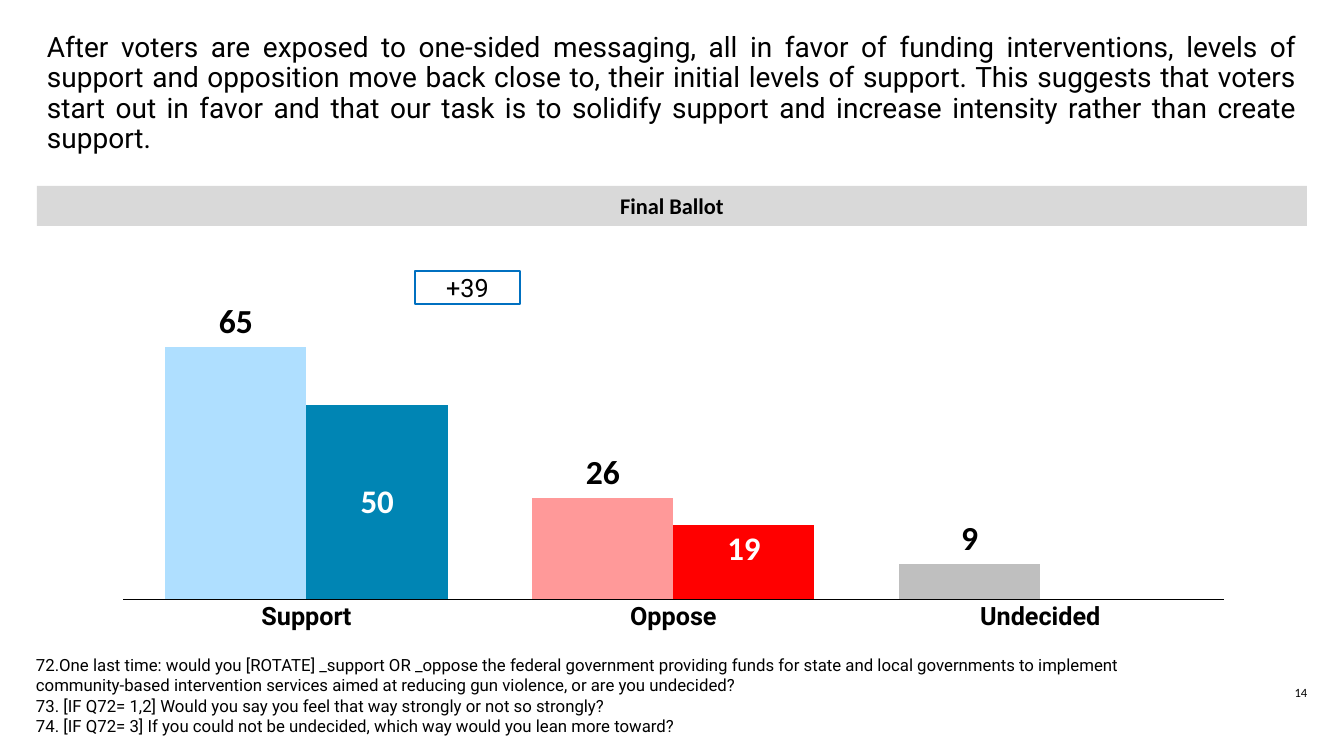
from copy import deepcopy
from lxml import etree
from pptx import Presentation
from pptx.chart.data import CategoryChartData
from pptx.dml.color import RGBColor
from pptx.enum.chart import XL_CHART_TYPE, XL_LABEL_POSITION, XL_TICK_MARK
from pptx.enum.shapes import MSO_SHAPE
from pptx.enum.text import MSO_ANCHOR, PP_ALIGN
from pptx.util import Pt

RECT = MSO_SHAPE.RECTANGLE
COLUMN = XL_CHART_TYPE.COLUMN_CLUSTERED
ABOVE, MID, INSIDE = XL_LABEL_POSITION.OUTSIDE_END, XL_LABEL_POSITION.CENTER, XL_LABEL_POSITION.INSIDE_END
NO_TICK = XL_TICK_MARK.NONE
TOP, MIDDLE = MSO_ANCHOR.TOP, MSO_ANCHOR.MIDDLE
LEFT, CENTER, JUSTIFY = PP_ALIGN.LEFT, PP_ALIGN.CENTER, PP_ALIGN.JUSTIFY
PX = 914400 / 100.8
COLORS = {
    "black": "000000", "white": "FFFFFF", "band": "D9D9D9", "edge": "0070C0",
    "sky": "AFDFFF", "pink": "FF9999", "gray": "BFBFBF",
    "teal": "0085B4", "red": "FF0000", "blue": "2E75B6", "indigo": "4472C4",
}


def box(*sides):
    return [round(side * PX) for side in sides]


def style(font, color="black", **values):
    font.color.rgb = RGBColor.from_string(COLORS[color])
    for name, value in values.items():
        setattr(font, name, value)


deck = Presentation()
deck.slide_width, deck.slide_height = box(1344, 756)
slide = deck.slides.add_slide(deck.slide_layouts[6])

data = CategoryChartData()
data.categories = ["Support", "Oppose", "Undecided"]
data.add_series("Series 1", [65, 26, 9])
data.add_series("Series 2", [50, 19, None])
wide, high = 1105, 428
chart = slide.shapes.add_chart(COLUMN, *box(119, 254, wide, high), data).chart
chart.has_title = False
chart.has_legend = False
style(chart.font, name="Calibri", size=Pt(15))

scale = chart.value_axis
scale.minimum_scale, scale.maximum_scale = 0, 85
scale.has_major_gridlines = False
scale.visible = False
base = chart.category_axis
base.major_tick_mark = base.minor_tick_mark = NO_TICK
base.format.line.width = Pt(0.25)
base.format.line.color.rgb = RGBColor.from_string(COLORS["black"])
style(base.tick_labels.font, name="Roboto", size=Pt(18), bold=True)

plot = chart.plots[0]
plot.gap_width, plot.overlap = 60, 0
plot.vary_by_categories = False
for series, main, fills, color, size, place in zip(
    plot.series, ["sky", "indigo"],
    [["sky", "pink", "gray"], ["teal", "red", "blue"]],
    ["black", "white"], [24, 23.5], [ABOVE, MID],
):
    series.format.fill.solid()
    series.format.fill.fore_color.rgb = RGBColor.from_string(COLORS[main])
    for index, fill in enumerate(fills):
        paint = series.points[index].format.fill
        paint.solid()
        paint.fore_color.rgb = RGBColor.from_string(COLORS[fill])
    labels = series.data_labels
    labels.show_value = True
    labels.position = place
    style(labels.font, color, name="Calibri", size=Pt(size), bold=True)
label = plot.series[1].points[1].data_label
style(label.font, "white", name="Calibri", size=Pt(23.5), bold=True)
label.position = INSIDE

bars = plot._element
area = bars.getparent()
for old in area.findall("{*}layout"):
    area.remove(old)
space = etree.QName(area).namespace
layout = etree.Element(f"{{{space}}}layout")
manual = etree.SubElement(layout, f"{{{space}}}manualLayout")
for tag, value in [
    ("layoutTarget", "inner"), ("xMode", "edge"), ("yMode", "edge"),
    ("x", 4 / wide), ("y", 15 / high), ("w", 1101 / wide), ("h", 330 / high),
]:
    etree.SubElement(manual, f"{{{space}}}{tag}", val=str(value))
area.insert(0, layout)

right = deepcopy(bars)
bars.remove(bars.findall("{*}ser")[1])
right.remove(right.find("{*}ser"))
bars.addnext(right)
ids = {node.get("val"): str(50 + turn) for turn, node in enumerate(right.findall("{*}axId"))}
last = area.find("{*}valAx")
for axis in [last, area.find("{*}catAx")]:
    twin = deepcopy(axis)
    twin.find("{*}delete").set("val", "1")
    last.addnext(twin)
    last = twin
    for node in twin.iter("{*}axId", "{*}crossAx"):
        node.set("val", ids[node.get("val")])
for node in right.findall("{*}axId"):
    node.set("val", ids[node.get("val")])
side = area.findall("{*}valAx")[1]
side.find("{*}scaling/{*}max").set("val", "50")
side.find("{*}axPos").set("val", "r")
side.find("{*}crosses").set("val", "max")

title = (
    "After voters are exposed to one-sided messaging, all in favor of funding interventions, "
    "levels of support and opposition move back close to, their initial levels of support. "
    "This suggests that voters start out in favor and that our task is to solidify support "
    "and increase intensity rather than create support."
)
notes = [
    "72.One last time: would you [ROTATE] _support OR _oppose the federal government "
    "providing funds for state and local governments to implement community-based "
    "intervention services aimed at reducing gun violence, or are you undecided?",
    "73. [IF Q72= 1,2] Would you say you feel that way strongly or not so strongly?",
    "74. [IF Q72= 3] If you could not be undecided, which way would you lean more toward?",
]
for sides, lines, face, size, bold, align, anchor, gap, fill, edge in [
    ((37, 21, 1270, 146), [title], "Roboto", 20, False, JUSTIFY, MIDDLE, 0.9, None, None),
    ((26, 650, 1109, 92), notes, "Roboto", 12, False, LEFT, TOP, 1.0, None, None),
    ((415, 271, 105, 33), ["+39"], "Roboto", 18, False, CENTER, MIDDLE, 1.0, None, "edge"),
    ((37, 186, 1270, 40), ["Final Ballot"], "Calibri", 16, True, CENTER, MIDDLE, 1.0, "band", None),
    ((1263, 680, 76, 33), ["14"], "Calibri", 9, False, CENTER, TOP, 1.0, None, None),
]:
    if fill or edge:
        shape = slide.shapes.add_shape(RECT, *box(*sides))
        shape.shadow.inherit = False
        shape.fill.background()
        shape.line.fill.background()
    else:
        shape = slide.shapes.add_textbox(*box(*sides))
    if fill:
        shape.fill.solid()
        shape.fill.fore_color.rgb = RGBColor.from_string(COLORS[fill])
    if edge:
        shape.line.color.rgb = RGBColor.from_string(COLORS[edge])
        shape.line.width = Pt(1)
    frame = shape.text_frame
    frame.word_wrap = True
    frame.vertical_anchor = anchor
    frame.text = "\n".join(lines)
    for para in frame.paragraphs:
        para.alignment = align
        para.line_spacing = gap
        style(para.runs[0].font, name=face, size=Pt(size), bold=bold)

deck.save("out.pptx")
